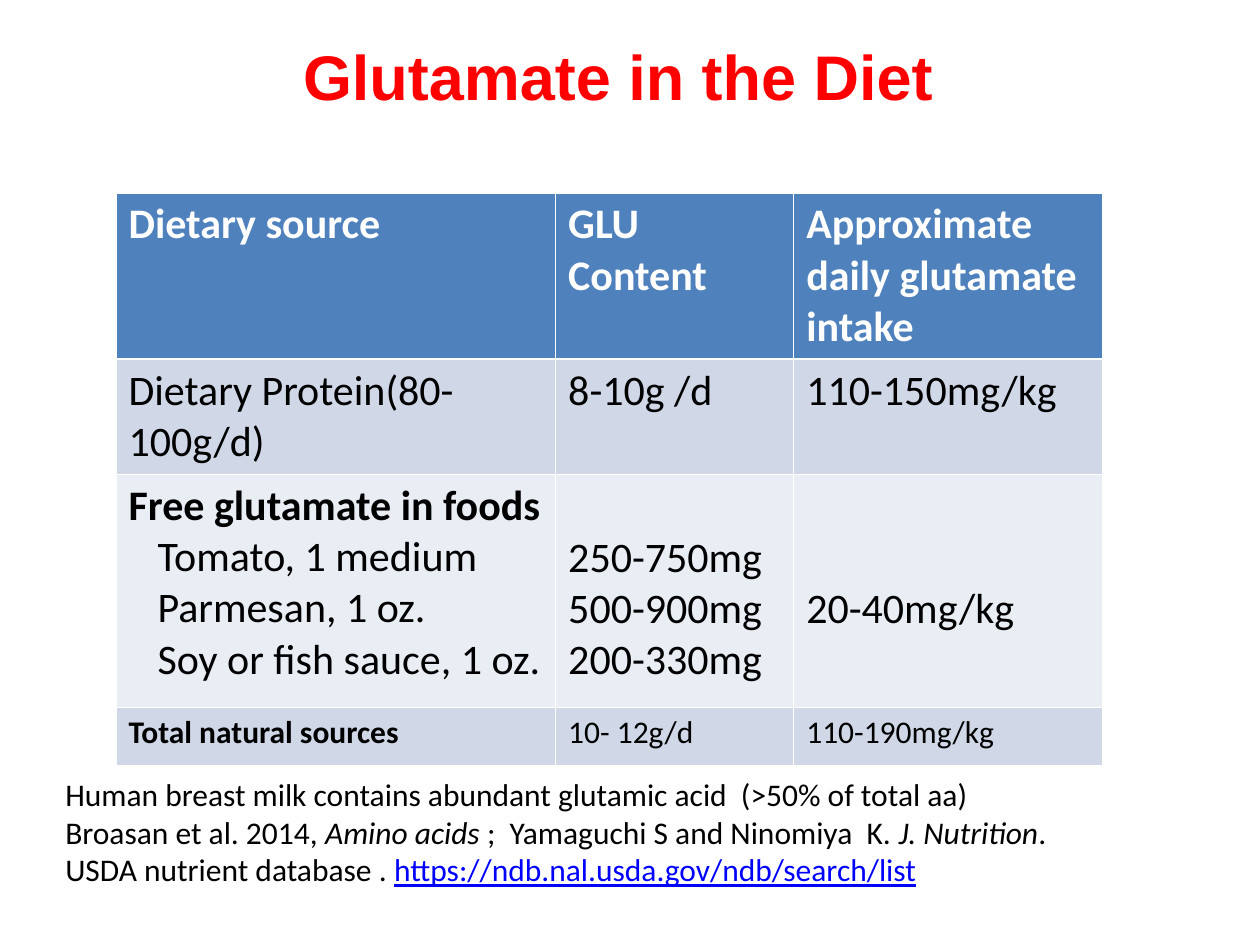
from pptx import Presentation
from pptx.dml.color import RGBColor
from pptx.enum.text import MSO_ANCHOR, PP_ALIGN
from pptx.util import Inches, Pt

CENTER, MIDDLE = PP_ALIGN.CENTER, MSO_ANCHOR.MIDDLE
TITLE_ONLY = 5

THEME = {
    "title_font": "Arial", "body_font": "Calibri",
    "title_size": 36, "table_size": 24, "small_size": 18,
    "title": "FF0000", "text": "000000", "white": "FFFFFF", "link": "0000FF",
    "header": "4F81BD", "bands": ("D0D8E8", "E9EDF4"),
}

TITLE = "Glutamate in the Diet "
COL_WIDTHS = (3.49, 1.89, 2.45)
ROW_HEIGHTS = (1.29, 0.91, 1.85, 0.46)
# Each cell is a list of lines.
ROWS = [
    [["Dietary source"], ["GLU Content"], ["Approximate  daily glutamate intake"]],
    [["Dietary Protein(80-100g/d)"], ["8-10g /d"], ["110-150mg/kg"]],
    [["Free glutamate in foods", "Tomato, 1 medium", "Parmesan, 1 oz.",
      "Soy or fish sauce, 1 oz."],
     ["250-750mg", "500-900mg", "200-330mg"],
     ["20-40mg/kg"]],
    [["Total natural sources"], ["10- 12g/d"], ["110-190mg/kg"]],
]
FOODS_ROW, TOTAL_ROW = 2, 3
LINES_ABOVE = {(FOODS_ROW, 1): 1, (FOODS_ROW, 2): 2}
LINE_HEIGHT, CELL_MARGIN, FOOD_INDENT = 0.41, 0.05, 0.23

# Each line is a list of (text, style) runs.
NOTES = [
    [("Human breast milk contains abundant glutamic acid  (>50% of total aa)", "")],
    [("Broasan et al. 2014, ", ""), ("Amino acids ", "italic"),
     (";  Yamaguchi S and Ninomiya  K. ", ""), ("J. Nutrition", "italic"), (".", "")],
    [("USDA nutrient database . ", ""),
     ("https://ndb.nal.usda.gov/ndb/search/list", "link")],
]


def rgb(name):
    return RGBColor.from_string(THEME.get(name, name))


def set_font(p, face, size, color, bold=False):
    p.font.name, p.font.size, p.font.bold = THEME[face], Pt(THEME[size]), bold
    p.font.color.rgb = rgb(color)


def add_title(slide):
    sp = slide.shapes.title
    sp.left, sp.top, sp.width, sp.height = map(Inches, (0.42, 0.17, 9.11, 0.85))
    tf = sp.text_frame
    tf.text, tf.vertical_anchor = TITLE, MIDDLE
    p = tf.paragraphs[0]
    p.alignment = CENTER
    set_font(p, "title_font", "title_size", "title", bold=True)


def fill_cell(cell, lines, row, col):
    header = row == 0
    cell.fill.solid()
    cell.fill.fore_color.rgb = rgb("header" if header else THEME["bands"][(row - 1) % 2])
    cell.margin_top = Inches(CELL_MARGIN + LINE_HEIGHT * LINES_ABOVE.get((row, col), 0))
    cell.text = "\n".join(lines)
    for i, p in enumerate(cell.text_frame.paragraphs):
        heading = col == 0 and i == 0 and row >= FOODS_ROW
        set_font(p, "body_font", "small_size" if row == TOTAL_ROW else "table_size",
                 "white" if header else "text", bold=header or heading)
        if row == FOODS_ROW and col == 0 and i > 0:
            p._p.get_or_add_pPr().set("marL", str(Inches(FOOD_INDENT)))


def add_diet_table(slide):
    table = slide.shapes.add_table(
        len(ROWS), len(COL_WIDTHS), Inches(0.92), Inches(1.53),
        Inches(sum(COL_WIDTHS)), Inches(sum(ROW_HEIGHTS))).table
    for column, width in zip(table.columns, COL_WIDTHS):
        column.width = Inches(width)
    for r, (cells, height) in enumerate(zip(ROWS, ROW_HEIGHTS)):
        table.rows[r].height = Inches(height)
        for c, lines in enumerate(cells):
            fill_cell(table.cell(r, c), lines, r, c)


def add_notes_text(slide):
    box = slide.shapes.add_textbox(*map(Inches, (0.42, 6.1, 9.4, 1.31)))
    tf = box.text_frame
    tf.word_wrap = True
    for i, runs in enumerate(NOTES):
        p = tf.add_paragraph() if i else tf.paragraphs[0]
        set_font(p, "body_font", "small_size", "text")
        for text, style in runs:
            r = p.add_run()
            r.text = text
            if style == "italic":
                r.font.italic = True
            elif style == "link":
                r.font.underline = True
                r.font.color.rgb = rgb("link")


def main():
    prs = Presentation()
    prs.slide_width, prs.slide_height = Inches(10), Inches(7.5)
    slide = prs.slides.add_slide(prs.slide_layouts[TITLE_ONLY])
    add_title(slide)
    add_diet_table(slide)
    add_notes_text(slide)
    prs.save("out.pptx")


if __name__ == "__main__":
    main()
